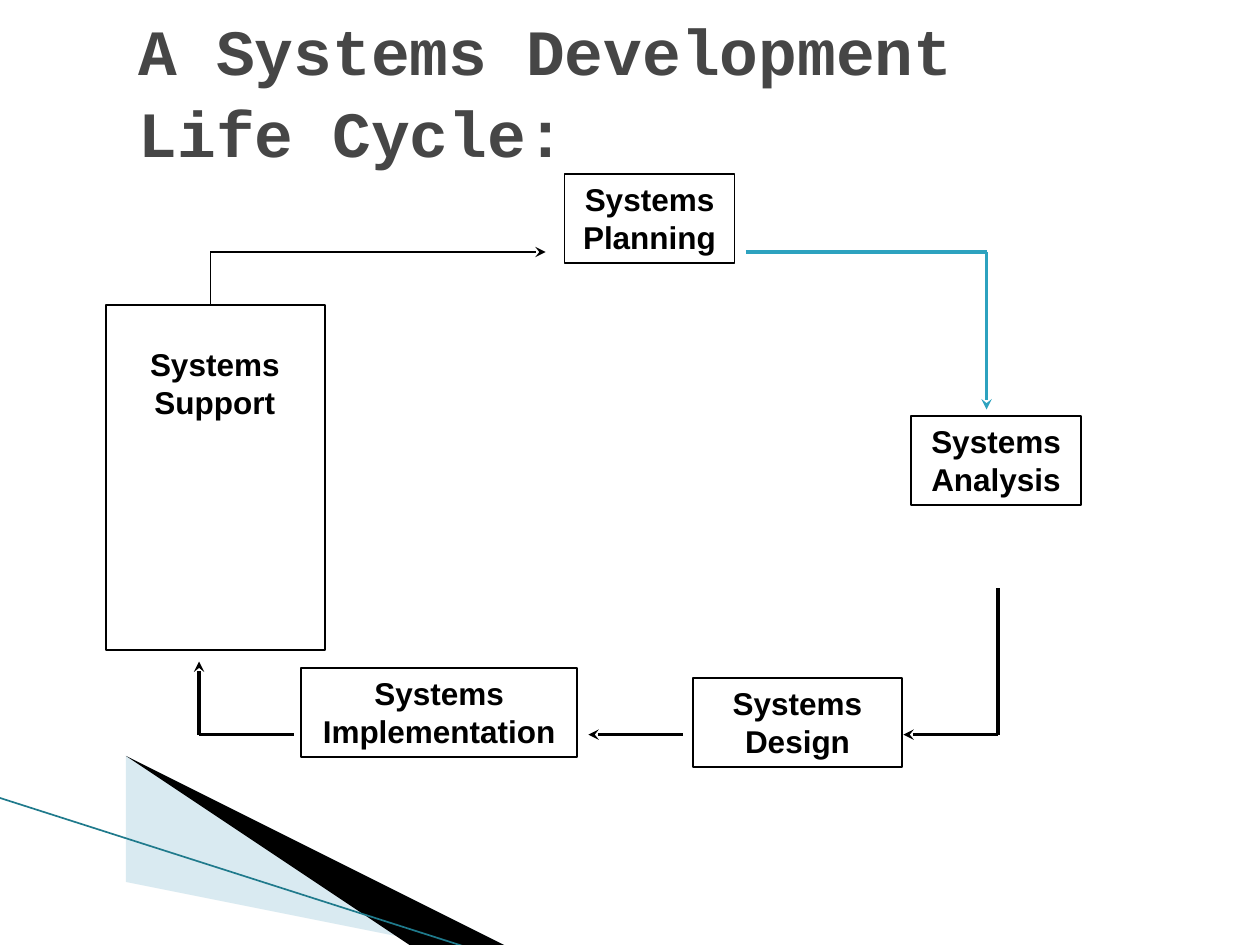
from typing import NamedTuple

from lxml.etree import SubElement
from pptx import Presentation
from pptx.dml.color import RGBColor
from pptx.enum.shapes import MSO_CONNECTOR, MSO_SHAPE
from pptx.enum.text import MSO_ANCHOR, MSO_AUTO_SIZE, PP_ALIGN
from pptx.oxml.ns import qn
from pptx.util import Inches, Pt

HUES = {"ink": "000000", "title": "464646", "teal": "2DA2BF",
        "pale": "A0CBDC", "edge": "1F7A8C", "white": "FFFFFF"}
Point = tuple[float, float]


class Stage(NamedTuple):
    name: str
    left: float
    top: float
    width: float
    framed: bool = True


class Route(NamedTuple):
    points: list[Point]
    hue: str = "ink"
    weight: float = 2
    arrow: bool = True


class Wedge(NamedTuple):
    points: list[Point]
    hue: str
    alpha: int = 100


STAGES = [
    Stage("Planning", 4.48, 1.38, 1.35),
    Stage("Support", 0.87, 2.69, 1.67, framed=False),
    Stage("Analysis", 7.23, 3.3, 1.35),
    Stage("Design", 5.5, 5.38, 1.66),
    Stage("Implementation", 2.39, 5.3, 2.19),
]
ROUTES = [
    Route([(1.67, 2.42), (1.67, 2), (4.33, 2)], weight=1),
    Route([(5.92, 2), (7.83, 2), (7.83, 3.25)], "teal"),
    Route([(7.92, 4.67), (7.92, 5.83), (7.17, 5.83)]),
    Route([(5.42, 5.83), (4.67, 5.83)]),
    Route([(2.33, 5.83), (1.58, 5.83), (1.58, 5.25)]),
]
WEDGES = [
    Wedge([(0.55, 6.51), (5.95, 7.51), (4.56, 7.51), (0.55, 6.5)], "pale", 40),
    Wedge([(0.53, 6.49), (4.57, 7.51), (3.72, 7.52), (0.54, 6.5)], "ink"),
]
EDGE = Route([(-0.01, 6.33), (3.71, 7.52)], "edge", 0.95, arrow=False)


def color(hue: str) -> RGBColor:
    return RGBColor.from_string(HUES[hue])


def style(font, hue: str, **values) -> None:
    for key, value in values.items():
        setattr(font, key, value)
    font.color.rgb = color(hue)


def draw_wedge(slide, wedge: Wedge) -> None:
    start, *rest = wedge.points
    pen = slide.shapes.build_freeform(*start, scale=Inches(1))
    pen.add_line_segments(rest)
    shape = pen.convert_to_shape()
    shape.shadow.inherit = False
    shape.line.fill.background()
    shape.fill.solid()
    shape.fill.fore_color.rgb = color(wedge.hue)
    if wedge.alpha < 100:
        tint = shape.fill._xPr.find(".//" + qn("a:srgbClr"))
        SubElement(tint, qn("a:alpha"), val=str(wedge.alpha * 1000))


def draw_route(slide, route: Route) -> None:
    """Join the points with straight lines; only the last has a head."""
    for start, end in zip(route.points, route.points[1:]):
        ends = [Inches(v) for v in (*start, *end)]
        line = slide.shapes.add_connector(MSO_CONNECTOR.STRAIGHT, *ends)
        line.line.color.rgb = color(route.hue)
        line.line.width = Pt(route.weight)
        if route.arrow and end == route.points[-1]:
            SubElement(line.line._get_or_add_ln(), qn("a:tailEnd"), type="stealth")
        SubElement(line._element.spPr, qn("a:effectLst"))


def draw_frame(slide, left: float, top: float, width: float, height: float):
    spot = [Inches(v) for v in (left, top, width, height)]
    frame = slide.shapes.add_shape(MSO_SHAPE.RECTANGLE, *spot)
    frame.shadow.inherit = False
    frame.fill.background()
    frame.line.color.rgb = color("ink")
    frame.line.width = Pt(1)
    return frame


def draw_stage(slide, stage: Stage) -> None:
    spot = (stage.left, stage.top, stage.width, 0.71)
    if stage.framed:
        shape = draw_frame(slide, *spot)
    else:
        shape = slide.shapes.add_textbox(*[Inches(v) for v in spot])
    frame = shape.text_frame
    frame.text = f"Systems\n{stage.name}"
    frame.word_wrap = True
    frame.vertical_anchor = MSO_ANCHOR.TOP
    for para in frame.paragraphs:
        para.alignment = PP_ALIGN.CENTER
        style(para.font, "ink", name="Arial", size=Pt(18), bold=True)


def set_title(slide) -> None:
    title = slide.shapes.title
    title.left, title.top, title.width, title.height = (
        Inches(v) for v in (1, 0.08, 7.83, 1.25))
    frame = title.text_frame
    frame.text = "A Systems Development Life Cycle:"
    frame.word_wrap = True
    frame.auto_size = MSO_AUTO_SIZE.NONE
    frame.vertical_anchor = MSO_ANCHOR.MIDDLE
    para = frame.paragraphs[0]
    para.alignment = PP_ALIGN.LEFT
    para.line_spacing = 1.05
    style(para.font, "title", name="Courier New", size=Pt(36.9), bold=True)


def main() -> None:
    deck = Presentation()
    deck.slide_width, deck.slide_height = Inches(10), Inches(7.5)
    slide = deck.slides.add_slide(deck.slide_layouts[5])
    for wedge in WEDGES:
        draw_wedge(slide, wedge)
    draw_route(slide, EDGE)
    set_title(slide)
    support = draw_frame(slide, 0.84, 2.42, 1.74, 2.74)
    support.fill.solid()
    support.fill.fore_color.rgb = color("white")
    for stage in STAGES:
        draw_stage(slide, stage)
    for route in ROUTES:
        draw_route(slide, route)
    deck.save("out.pptx")


if __name__ == "__main__":
    main()
